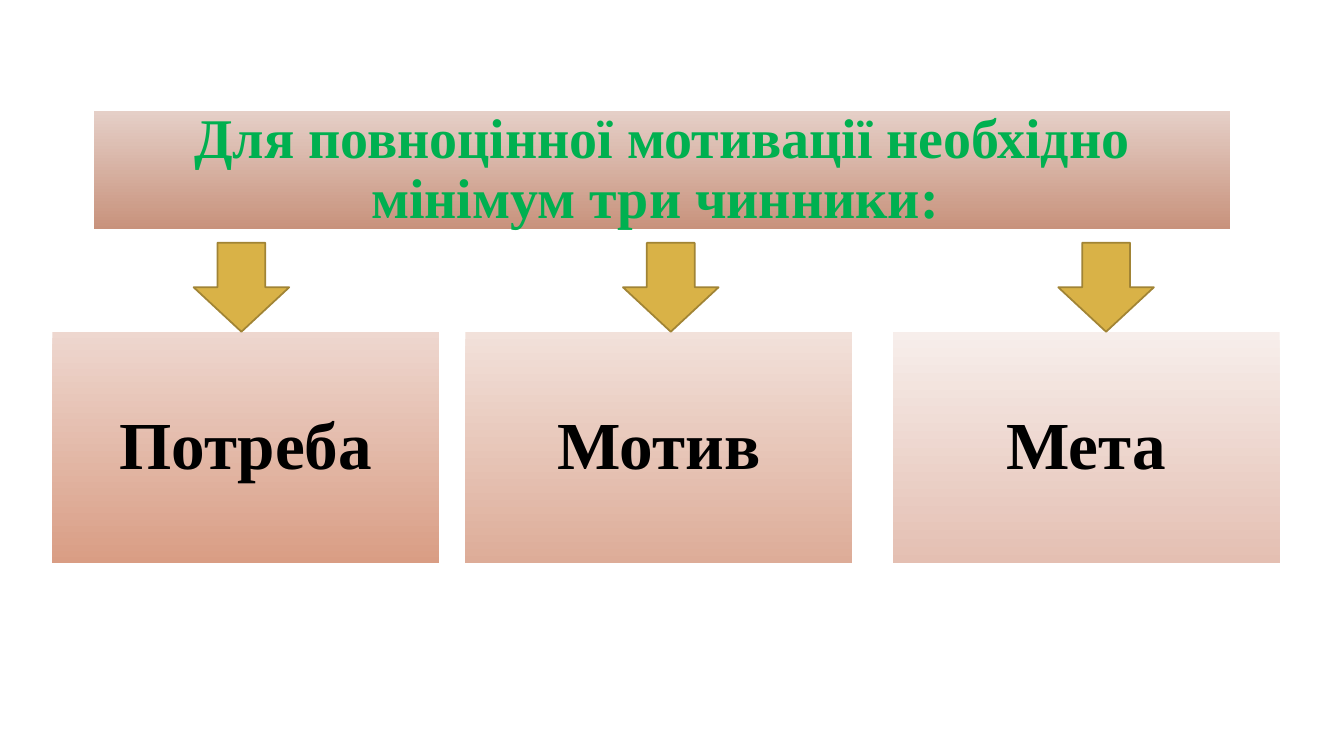
from pptx import Presentation
from pptx.dml.color import RGBColor
from pptx.enum.shapes import MSO_SHAPE as Shape
from pptx.enum.text import MSO_ANCHOR as Anchor, PP_ALIGN as Align
from pptx.util import Cm, Pt

FONT = "Times New Roman"
BLACK = RGBColor(0x00, 0x00, 0x00)
GREEN = RGBColor(0x00, 0xB0, 0x50)
GOLD = RGBColor(0xD9, 0xB2, 0x47)
DARK_GOLD = RGBColor(0xA1, 0x84, 0x35)
HEADING_SHADES = RGBColor(0xE5, 0xCF, 0xC7), RGBColor(0xC8, 0x92, 0x7C)
NEED_SHADES = RGBColor(0xEE, 0xD7, 0xCF), RGBColor(0xD9, 0x9D, 0x84)
MOTIVE_SHADES = RGBColor(0xF2, 0xE1, 0xDA), RGBColor(0xDD, 0xAC, 0x98)
GOAL_SHADES = RGBColor(0xF7, 0xEE, 0xEB), RGBColor(0xE4, 0xBF, 0xB2)

FACTOR_TOP, FACTOR_WIDTH, FACTOR_HEIGHT = Cm(8.36), Cm(9.75), Cm(5.84)
ARROW_WIDTH, ARROW_HEIGHT = Cm(2.41), Cm(2.24)
# Word, left edge of the box, left edge of its arrow, top and bottom shades
FACTORS = [
    ("Потреба", Cm(1.32), Cm(4.88), NEED_SHADES),
    ("Мотив", Cm(11.73), Cm(15.7), MOTIVE_SHADES),
    ("Мета", Cm(22.5), Cm(26.67), GOAL_SHADES),
]


def add_panel(slide, box, wording, size, color, shades, margin):
    """Add a rectangle shaded from top to bottom, with centred bold text."""
    panel = slide.shapes.add_shape(Shape.RECTANGLE, *box)
    panel.shadow.inherit = False
    panel.line.fill.background()
    panel.fill.gradient()
    panel.fill.gradient_angle = 270
    for stop, shade in zip(panel.fill.gradient_stops, shades):
        stop.color.rgb = shade

    frame = panel.text_frame
    frame.word_wrap = True
    frame.vertical_anchor = Anchor.MIDDLE
    frame.margin_left = frame.margin_right = margin
    frame.margin_top = frame.margin_bottom = margin
    paragraph = frame.paragraphs[0]
    paragraph.alignment = Align.CENTER
    paragraph.line_spacing = 0.9
    run = paragraph.add_run()
    run.text = wording
    run.font.name = FONT
    run.font.size = size
    run.font.bold = True
    run.font.color.rgb = color


def add_down_arrow(slide, box):
    arrow = slide.shapes.add_shape(Shape.DOWN_ARROW, *box)
    arrow.shadow.inherit = False
    arrow.fill.solid()
    arrow.fill.fore_color.rgb = GOLD
    arrow.line.color.rgb = DARK_GOLD
    arrow.line.width = Pt(1.25)


def add_heading(slide, box):
    add_panel(slide, box, "Для повноцінної мотивації необхідно мінімум три чинники: ",
              Pt(40), GREEN, HEADING_SHADES, Cm(0.43))


def add_factor(slide, box, word, arrow_left, shades):
    """Add a factor's box and the arrow that rests on its top edge."""
    add_panel(slide, box, word, Pt(48), BLACK, shades, Cm(0.51))
    arrow_top = box[1] - ARROW_HEIGHT
    add_down_arrow(slide, (arrow_left, arrow_top, ARROW_WIDTH, ARROW_HEIGHT))


def main():
    deck = Presentation()
    deck.slide_width, deck.slide_height = Cm(33.87), Cm(19.05)
    slide = deck.slides.add_slide(deck.slide_layouts[6])
    add_heading(slide, (Cm(2.36), Cm(2.81), Cm(28.65), Cm(2.97)))
    for word, left, arrow_left, shades in FACTORS:
        box = left, FACTOR_TOP, FACTOR_WIDTH, FACTOR_HEIGHT
        add_factor(slide, box, word, arrow_left, shades)
    deck.save("out.pptx")


if __name__ == "__main__":
    main()
